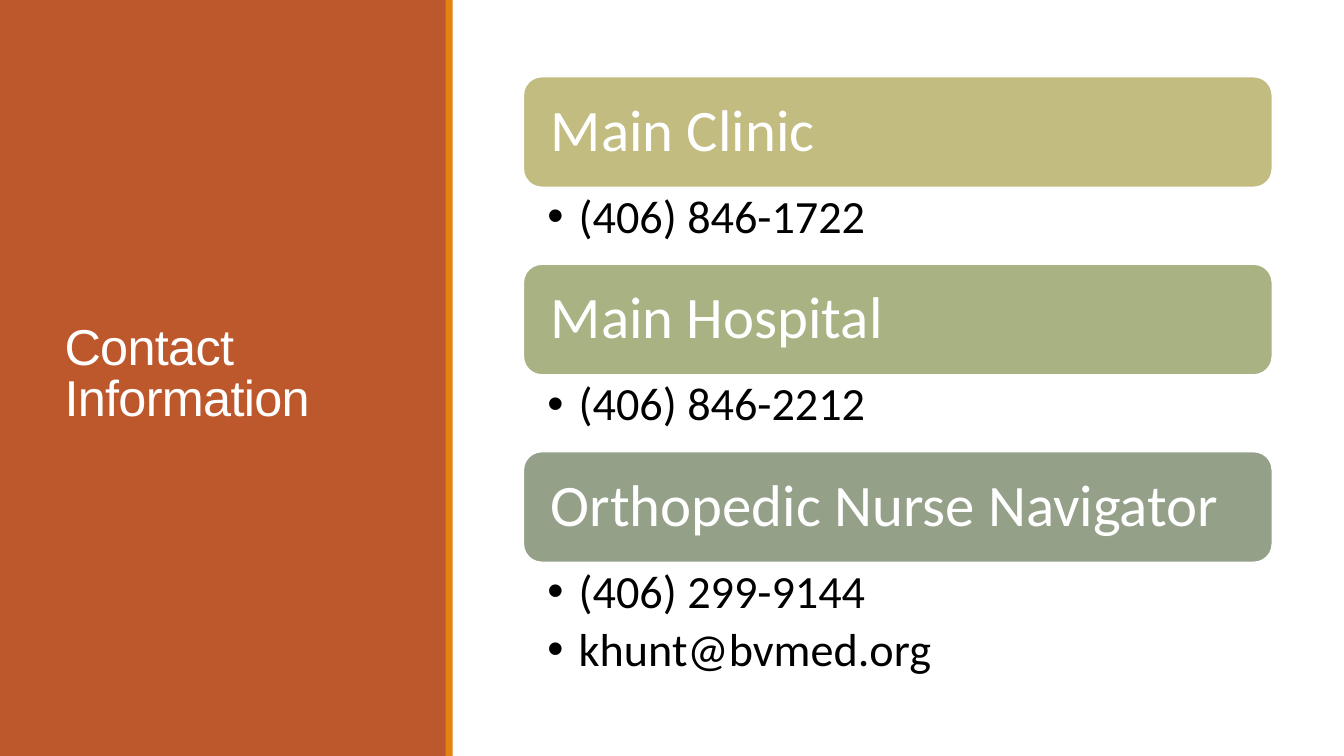
"""Build the contact information slide."""
from lxml.etree import SubElement
from pptx import Presentation
from pptx.dml.color import RGBColor
from pptx.enum.shapes import MSO_SHAPE
from pptx.enum.text import MSO_ANCHOR, MSO_AUTO_SIZE, PP_ALIGN
from pptx.oxml.ns import qn
from pptx.util import Inches, Pt

WHITE = RGBColor(0xFF, 0xFF, 0xFF)
BLACK = RGBColor(0x00, 0x00, 0x00)
RUST = RGBColor(0xBD, 0x58, 0x2C)
ORANGE = RGBColor(0xE4, 0x83, 0x12)
KHAKI = RGBColor(0xC2, 0xBC, 0x80)
SAGE = RGBColor(0xA8, 0xB2, 0x83)
GRAY_GREEN = RGBColor(0x94, 0xA0, 0x88)

CONTACTS = [
    ("Main Clinic", KHAKI, ["(406) 846-1722"]),
    ("Main Hospital", SAGE, ["(406) 846-2212"]),
    ("Orthopedic Nurse Navigator", GRAY_GREEN, ["(406) 299-9144", "khunt@bvmed.org"]),
]
CONTACT_LEFT, CONTACT_TOP, CONTACT_WIDTH = 5.19, 0.76, 7.43
CONTACT_PITCH, HEADING_HEIGHT = 1.86, 1.1
DETAIL_HEIGHTS = {1: 0.76, 2: 1.24}


def place(shape, left, top, width, height):
    """Set the position and size of a shape in inches."""
    shape.left, shape.top = Inches(left), Inches(top)
    shape.width, shape.height = Inches(width), Inches(height)


def set_margins(frame, left, top, right, bottom):
    """Set the inner margins of a text frame in inches."""
    frame.margin_left, frame.margin_top = Inches(left), Inches(top)
    frame.margin_right, frame.margin_bottom = Inches(right), Inches(bottom)


def format_paragraph(paragraph, font_name, size, color, line_spacing):
    """Left-align a paragraph and set its font and line spacing."""
    paragraph.alignment = PP_ALIGN.LEFT
    paragraph.line_spacing = line_spacing
    paragraph.font.name = font_name
    paragraph.font.size = Pt(size)
    paragraph.font.color.rgb = color


def add_bullet(paragraph):
    """Give a paragraph a round bullet with a hanging indent."""
    properties = paragraph._p.get_or_add_pPr()
    properties.set("marL", str(Inches(0.31)))
    properties.set("indent", str(Inches(-0.31)))
    SubElement(properties, qn("a:buFont")).set("typeface", "Arial")
    SubElement(properties, qn("a:buChar")).set("char", "•")


def add_block(slide, kind, left, top, width, height, color):
    """Add a filled shape without outline or shadow."""
    shape = slide.shapes.add_shape(
        kind, Inches(left), Inches(top), Inches(width), Inches(height))
    shape.shadow.inherit = False
    shape.fill.solid()
    shape.fill.fore_color.rgb = color
    shape.line.fill.background()
    return shape


def add_title_panel(slide, text):
    """Add the side panel with its accent stripe and the slide title."""
    title = slide.shapes.title
    panel = add_block(slide, MSO_SHAPE.RECTANGLE, 0, 0, 4.43, 7.5, RUST)
    add_block(slide, MSO_SHAPE.RECTANGLE, 4.42, 0, 0.07, 7.5, ORANGE)
    title.element.addprevious(panel.element)
    place(title, 0.54, 0.57, 3.37, 6.31)
    frame = title.text_frame
    frame.text = text
    frame.word_wrap = True
    frame.auto_size = MSO_AUTO_SIZE.NONE
    frame.vertical_anchor = MSO_ANCHOR.MIDDLE
    paragraph = frame.paragraphs[0]
    format_paragraph(paragraph, "Arial", 36, WHITE, 0.85)
    paragraph.runs[0]._r.get_or_add_rPr().set("spc", "-50")


def add_heading(slide, top, text, color):
    """Add a rounded bar that names a contact."""
    bar = add_block(slide, MSO_SHAPE.ROUNDED_RECTANGLE,
                    CONTACT_LEFT, top, CONTACT_WIDTH, HEADING_HEIGHT, color)
    bar.line.color.rgb = WHITE
    bar.line.width = Pt(1.25)
    frame = bar.text_frame
    frame.text = text
    frame.word_wrap = True
    frame.vertical_anchor = MSO_ANCHOR.MIDDLE
    set_margins(frame, 0.22, 0.17, 0.22, 0.17)
    format_paragraph(frame.paragraphs[0], "Calibri", 42, WHITE, 0.9)


def add_details(slide, top, details):
    """Add the bulleted details below a contact heading."""
    box = slide.shapes.add_textbox(
        Inches(CONTACT_LEFT), Inches(top),
        Inches(CONTACT_WIDTH), Inches(DETAIL_HEIGHTS[len(details)]))
    frame = box.text_frame
    frame.text = "\n".join(details)
    frame.word_wrap = True
    set_margins(frame, 0.24, 0.06, 0.33, 0.06)
    for paragraph in frame.paragraphs:
        add_bullet(paragraph)
        format_paragraph(paragraph, "Calibri", 33, BLACK, 0.9)
        paragraph.space_after = Pt(6)


def main():
    """Create the presentation and save it."""
    presentation = Presentation()
    presentation.slide_width, presentation.slide_height = Inches(13.33), Inches(7.5)
    slide = presentation.slides.add_slide(presentation.slide_layouts[5])
    slide.background.fill.solid()
    slide.background.fill.fore_color.rgb = WHITE
    add_title_panel(slide, "Contact Information")
    for index, (name, color, details) in enumerate(CONTACTS):
        top = CONTACT_TOP + index * CONTACT_PITCH
        add_heading(slide, top, name, color)
        add_details(slide, top + HEADING_HEIGHT, details)
    presentation.save("out.pptx")


if __name__ == "__main__":
    main()
